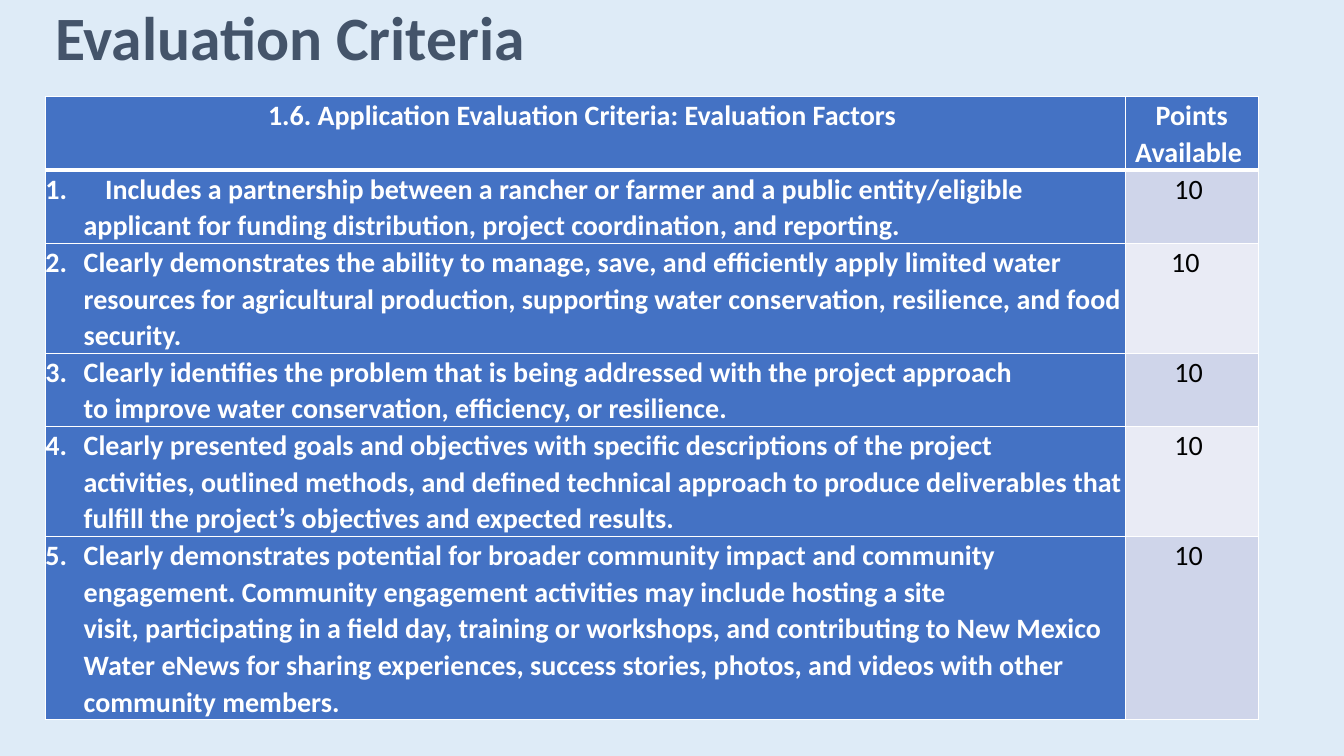
from pptx import Presentation
from pptx.dml.color import RGBColor
from pptx.enum.text import MSO_ANCHOR, PP_ALIGN
from pptx.oxml.ns import qn
from pptx.util import Inches, Pt
from lxml.etree import SubElement

theme = {
    "font": "Calibri", "head": 44, "body": 20,
    "back": "DEEBF7", "title": "44546A", "blue": "4472C4",
    "white": "FFFFFF", "black": "000000", "bands": ("CFD5EA", "E9EBF5"),
}
left, hang = 0.45, 0.38  # margin, indent
line = 6.18 / 17  # table height shared by its lines of text


def style(para, size, color, bold, space):
    para.line_spacing = space
    for run in para.runs:
        font = run.font
        font.name, font.size, font.bold = theme["font"], Pt(size), bold
        font.color.rgb = RGBColor.from_string(color)


def paint(cell, fill, base):
    cell.margin_left = cell.margin_right = 0
    cell.margin_top = cell.margin_bottom = 0
    props = cell._tc.get_or_add_tcPr()
    for side, width in zip("LRTB", (1, 1, 1, base)):
        edge = SubElement(props, qn("a:ln" + side), w=str(Pt(width)))
        solid = SubElement(edge, qn("a:solidFill"))
        SubElement(solid, qn("a:srgbClr"), val=theme["white"])
    cell.fill.solid()
    cell.fill.fore_color.rgb = RGBColor.from_string(fill)


# Slide
deck = Presentation()
deck.slide_width, deck.slide_height = Inches(13.33), Inches(7.5)
slide = deck.slides.add_slide(deck.slide_layouts[6])
slide.background.fill.solid()
slide.background.fill.fore_color.rgb = RGBColor.from_string(theme["back"])

# Title
box = slide.shapes.add_textbox(Inches(left), Inches(-0.32), Inches(11.5), Inches(1.45))
frame = box.text_frame
frame.word_wrap = True
frame.vertical_anchor = MSO_ANCHOR.MIDDLE
frame.text = "Evaluation Criteria"
style(frame.paragraphs[0], theme["head"], theme["title"], True, 0.9)

# Rows: factor, points, lines of text; ~ stands for a no-break space
rows = [
    ("1.6. Application~Evaluation~Criteria:~Evaluation Factors~", "Points Available~", 2),
    ("Includes~a~partnership between~a~rancher or farmer and~a~public entity/eligible "
     "applicant for funding distribution, project coordination, and reporting.~", "10~", 2),
    ("Clearly~demonstrates~the ability to manage, save, and efficiently apply limited water "
     "resources for agricultural production, supporting water conservation, resilience, "
     "and food security.~", "10~~", 3),
    ("Clearly~identifies~the problem that is~being~addressed with the~project~approach "
     "to~improve water conservation, efficiency, or resilience.~~", "10~", 2),
    ("Clearly~presented~goals and~objectives~with specific descriptions of the project "
     "activities,~outlined methods,~and defined technical~approach~to produce deliverables "
     "that fulfill the project’s~objectives~and expected results.~", "10~", 3),
    ("Clearly~demonstrates~potential for broader community impact and community engagement. "
     "Community engagement activities may include hosting a site visit,~participating~in a "
     "field day, training or workshops, and contributing to New Mexico Water~eNews~for "
     "sharing experiences, success stories, photos, and videos with other community "
     "members.~", "10~", 5),
]

# Table
cols = (10.71, 1.32)
high = line * sum(row[2] for row in rows)
grid = slide.shapes.add_table(len(rows), len(cols), Inches(left), Inches(0.96),
                              Inches(sum(cols)), Inches(high)).table
grid.first_row = grid.horz_banding = False
for col, width in zip(grid.columns, cols):
    col.width = Inches(width)

for num, (factor, points, count) in enumerate(rows):
    grid.rows[num].height = Inches(line * count)
    for col, text in enumerate((factor, points)):
        cell = grid.cell(num, col)
        score = num > 0 and col == 1
        fill = theme["bands"][(num - 1) % 2] if score else theme["blue"]
        paint(cell, fill, 1 if num else 3)
        para = cell.text_frame.paragraphs[0]
        if num == 1 and col == 0:
            # Typed number with one widened gap
            for part in ("1.", " "):
                gap = para.add_run()
                gap.text = part
            gap.font._element.set("spc", "2260")
        para.add_run().text = text.replace("~", chr(160))
        if num and col == 0:
            # Hanging number
            props = para._p.get_or_add_pPr()
            props.set("marL", str(Inches(hang)))
            props.set("indent", str(-Inches(hang)))
            if num > 1:
                SubElement(props, qn("a:buAutoNum"), type="arabicPeriod", startAt=str(num))
            tabs = SubElement(props, qn("a:tabLst"))
            SubElement(tabs, qn("a:tab"), pos=str(Inches(0.5)), algn="l")
        else:
            para.alignment = PP_ALIGN.CENTER
        style(para, theme["body"], theme["black" if score else "white"], not score, 1.07)

deck.save("out.pptx")
